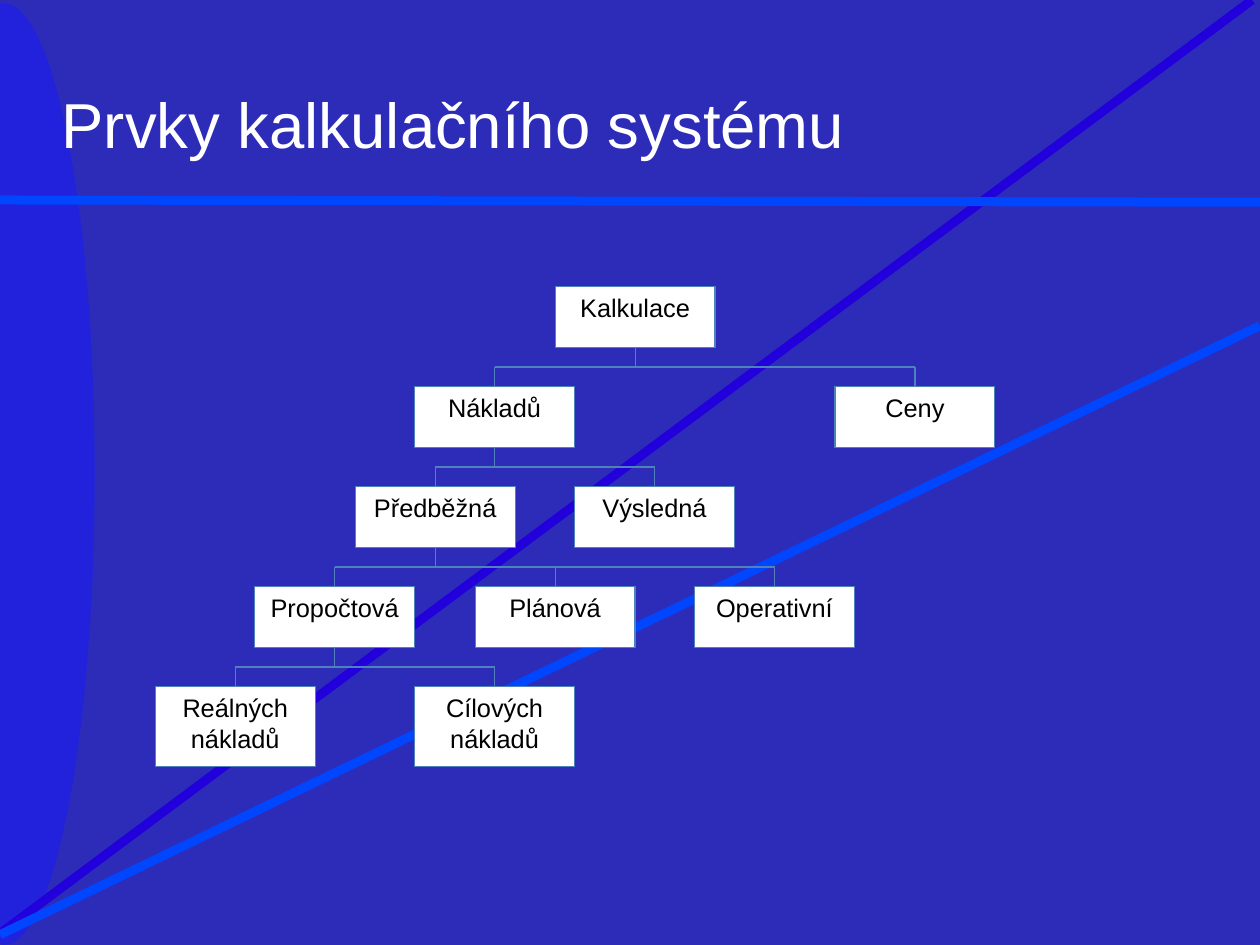
"""Build the slide showing the hierarchy of costing system elements."""
from dataclasses import dataclass
from math import cos, pi, sin

from lxml.etree import SubElement
from pptx import Presentation
from pptx.dml.color import RGBColor
from pptx.enum.shapes import MSO_CONNECTOR, MSO_SHAPE
from pptx.enum.text import MSO_ANCHOR, PP_ALIGN
from pptx.oxml.ns import qn
from pptx.util import Inches, Pt


@dataclass(frozen=True)
class Theme:
    font: str = "Arial"
    title_size: int = 40
    box_size: int = 16
    stripe_width: float = 5.67
    branch_width: float = 0.75
    backdrop: RGBColor = RGBColor.from_string("2C2CB8")
    arc: RGBColor = RGBColor.from_string("2222DC")
    violet: RGBColor = RGBColor.from_string("2200DC")
    azure: RGBColor = RGBColor.from_string("0046FF")
    branch: RGBColor = RGBColor.from_string("4F81BD")
    white: RGBColor = RGBColor.from_string("FFFFFF")
    black: RGBColor = RGBColor.from_string("000000")


theme = Theme()
prs = Presentation()
prs.slide_width, prs.slide_height = Inches(11.03), Inches(8.27)
slide = prs.slides.add_slide(prs.slide_layouts[6])
slide.background.fill.solid()
slide.background.fill.fore_color.rgb = theme.backdrop


def add_line(x1, y1, x2, y2, color, width):
    line = slide.shapes.add_connector(
        MSO_CONNECTOR.STRAIGHT, Inches(x1), Inches(y1), Inches(x2), Inches(y2))
    line.line.color.rgb = color
    line.line.width = Pt(width)
    SubElement(line._element.spPr, qn("a:effectLst"))


def write(frame, text, size, color, align):
    frame.word_wrap = True
    frame.vertical_anchor = MSO_ANCHOR.TOP
    paragraph = frame.paragraphs[0]
    paragraph.text = text
    paragraph.alignment = align
    paragraph.font.name = theme.font
    paragraph.font.size = Pt(size)
    paragraph.font.color.rgb = color


STEPS = 40
angles = [pi * step / STEPS - pi / 2 for step in range(STEPS + 1)]
rim = [(Inches(0.04 + 0.79 * cos(a)), Inches(4.15 + 4.12 * sin(a))) for a in angles]
outline = slide.shapes.build_freeform(0, Inches(0.03))
outline.add_line_segments(rim + [(0, Inches(8.26))], close=True)
side_arc = outline.convert_to_shape()
side_arc.shadow.inherit = False
side_arc.fill.solid()
side_arc.fill.fore_color.rgb = theme.arc
side_arc.line.fill.background()

stripes = [
    (10.96, 0, 0, 8.17, theme.violet),
    (11.03, 1.77, 0, 1.75, theme.azure),
    (11.03, 2.85, 0, 8.18, theme.azure),
]
for stripe in stripes:
    add_line(*stripe, theme.stripe_width)

title = slide.shapes.add_textbox(Inches(0.54), Inches(0.74), Inches(9.95), Inches(0.67))
heading = title.text_frame
heading.margin_left = heading.margin_right = heading.margin_top = heading.margin_bottom = 0
write(heading, "Prvky kalkulačního systému", theme.title_size, theme.white, PP_ALIGN.LEFT)

BOX_WIDTH, BOX_HEIGHT, LAST_HEIGHT = 1.4, 0.53, 0.7
FIRST_TOP, LEVEL_STEP = 2.51, 0.875
GAP_MIDDLE = (LEVEL_STEP - BOX_HEIGHT) / 2
levels = [
    [("Kalkulace", 5.56)],
    [("Nákladů", 4.33), ("Ceny", 8.01)],
    [("Předběžná", 3.81), ("Výsledná", 5.73)],
    [("Propočtová", 2.93), ("Plánová", 4.86), ("Operativní", 6.78)],
    [("Reálných nákladů", 2.06), ("Cílových nákladů", 4.33)],
]

for depth, level in enumerate(levels):
    top = FIRST_TOP + depth * LEVEL_STEP
    height = LAST_HEIGHT if level is levels[-1] else BOX_HEIGHT
    for label, center in level:
        box = slide.shapes.add_shape(
            MSO_SHAPE.RECTANGLE, Inches(center - BOX_WIDTH / 2), Inches(top),
            Inches(BOX_WIDTH), Inches(height))
        box.shadow.inherit = False
        box.fill.solid()
        box.fill.fore_color.rgb = theme.white
        box.line.color.rgb = theme.branch
        box.line.width = Pt(theme.branch_width)
        write(box.text_frame, label, theme.box_size, theme.black, PP_ALIGN.CENTER)

for depth, (parents, children) in enumerate(zip(levels, levels[1:])):
    parent_bottom = FIRST_TOP + depth * LEVEL_STEP + BOX_HEIGHT
    rail = parent_bottom + GAP_MIDDLE
    child_top = FIRST_TOP + (depth + 1) * LEVEL_STEP
    parent_center = parents[0][1]
    centers = [center for _, center in children]
    branches = [(parent_center, parent_bottom, parent_center, rail),
                (centers[0], rail, centers[-1], rail)]
    branches += [(center, rail, center, child_top) for center in centers]
    for branch in branches:
        add_line(*branch, theme.branch, theme.branch_width)

prs.save("out.pptx")
